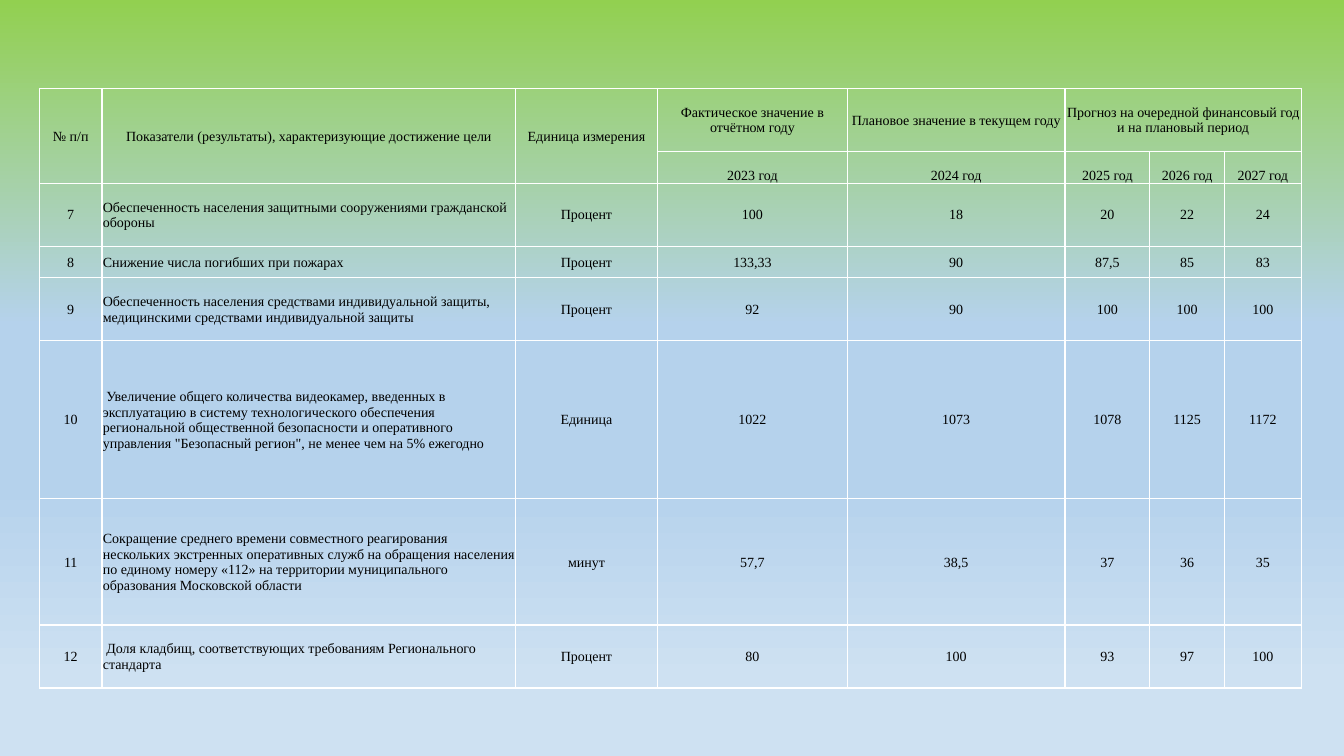
from lxml import etree
from pptx import Presentation
from pptx.dml.color import RGBColor
from pptx.enum.text import MSO_ANCHOR, PP_ALIGN
from pptx.oxml.ns import qn
from pptx.util import Pt
from copy import deepcopy

LEFT, CENTER = PP_ALIGN.LEFT, PP_ALIGN.CENTER
MIDDLE, BOTTOM = MSO_ANCHOR.MIDDLE, MSO_ANCHOR.BOTTOM
BLACK = RGBColor(0x00, 0x00, 0x00)
WHITE = RGBColor(0xFF, 0xFF, 0xFF)
GREEN = RGBColor(0x92, 0xD0, 0x50)
SKY = RGBColor(0xB5, 0xD2, 0xEC)
PALE_SKY = RGBColor(0xCE, 0xE1, 0xF2)

BACKGROUND = [(0, GREEN), (0.43, SKY), (0.64, SKY), (0.9, PALE_SKY)]
FONT = {"name": "Times New Roman", "size": Pt(10), "bold": False}
MARGINS = {"margin_left": Pt(0.7), "margin_right": Pt(0.7),
           "margin_top": Pt(0.7), "margin_bottom": 0}

COLUMN_WIDTHS = [44.6, 295.4, 101.4, 135.7, 155.4, 60.7, 53.2, 55]
ROW_UNITS = [2, 1, 2, 1, 2, 5, 4, 2]
MERGES = [(0, 0, 1, 0), (0, 1, 1, 1), (0, 2, 1, 2), (0, 5, 0, 7)]
YEAR_ROW, FIRST_DATA_ROW, INDICATOR_COLUMN = 1, 2, 1

ROWS = [
    ["№ п/п", "Показатели (результаты), характеризующие достижение цели",
     "Единица измерения", "Фактическое значение в отчётном году",
     "Плановое значение в текущем году",
     "Прогноз на очередной финансовый год и на плановый период", "", ""],
    ["", "", "", "2023 год", "2024 год", "2025 год", "2026 год", "2027 год"],
    ["7", "Обеспеченность населения защитными сооружениями гражданской обороны",
     "Процент", "100", "18", "20", "22", "24"],
    ["8", "Снижение числа погибших при пожарах",
     "Процент", "133,33", "90", "87,5", "85", "83"],
    ["9", "Обеспеченность населения средствами индивидуальной защиты, "
     "медицинскими средствами индивидуальной защиты",
     "Процент", "92", "90", "100", "100", "100"],
    ["10", " Увеличение общего количества видеокамер, введенных в эксплуатацию "
     "в систему технологического обеспечения региональной общественной "
     "безопасности и оперативного управления \"Безопасный регион\", "
     "не менее чем на 5% ежегодно",
     "Единица", "1022", "1073", "1078", "1125", "1172"],
    ["11", "Сокращение среднего времени совместного реагирования нескольких "
     "экстренных оперативных служб на обращения населения по единому номеру "
     "«112» на территории муниципального образования Московской области",
     "минут", "57,7", "38,5", "37", "36", "35"],
    ["12", " Доля кладбищ, соответствующих требованиям Регионального стандарта",
     "Процент", "80", "100", "93", "97", "100"],
]


def set_attributes(target, values):
    for name, value in values.items():
        setattr(target, name, value)


def paint_background(s):
    fill = s.background.fill
    fill.gradient()
    fill.gradient_angle = 270
    stop_list = fill._fill._gradFill.find(qn("a:gsLst"))
    while len(stop_list) < len(BACKGROUND):
        stop_list.append(deepcopy(stop_list[0]))
    for stop, (position, color) in zip(fill.gradient_stops, BACKGROUND):
        stop.position = position
        stop.color.rgb = color


def add_borders(cell, color, width):
    properties = cell._tc.get_or_add_tcPr()
    for side in ("a:lnL", "a:lnR", "a:lnT", "a:lnB"):
        line = etree.SubElement(properties, qn(side), w=str(Pt(width)))
        solid = etree.SubElement(line, qn("a:solidFill"))
        etree.SubElement(solid, qn("a:srgbClr"), val=str(color))


def format_cell(cell, text, align, anchor):
    add_borders(cell, WHITE, 1)
    cell.fill.background()
    set_attributes(cell, MARGINS)
    cell.vertical_anchor = anchor
    p = cell.text_frame.paragraphs[0]
    p.alignment = align
    set_attributes(p.font, FONT)
    if text:
        r = p.add_run()
        r.text = text
        set_attributes(r.font, FONT)
        r.font.color.rgb = BLACK


def add_indicator_table(s, left, top, width, height):
    table = s.shapes.add_table(len(ROWS), len(COLUMN_WIDTHS), Pt(left), Pt(top),
                               Pt(width), Pt(height)).table
    table.first_row = table.horz_banding = False
    for column, share in zip(table.columns, COLUMN_WIDTHS):
        column.width = Pt(width * share / sum(COLUMN_WIDTHS))
    for row, units in zip(table.rows, ROW_UNITS):
        row.height = Pt(height * units / sum(ROW_UNITS))
    for i, texts in enumerate(ROWS):
        anchor = BOTTOM if i == YEAR_ROW else MIDDLE
        for j, text in enumerate(texts):
            is_indicator = i >= FIRST_DATA_ROW and j == INDICATOR_COLUMN
            # Merged header cells keep the anchor of their first row.
            format_cell(table.cell(i, j), text,
                        LEFT if is_indicator else CENTER, anchor)
    for top_row, first, bottom_row, last in MERGES:
        table.cell(top_row, first).merge(table.cell(bottom_row, last))


def main():
    prs = Presentation()
    prs.slide_width, prs.slide_height = Pt(960), Pt(540)
    s = prs.slides.add_slide(prs.slide_layouts[6])
    paint_background(s)
    add_indicator_table(s, 28.2, 63.2, 901.4, 428.4)
    prs.save("out.pptx")


if __name__ == "__main__":
    main()
